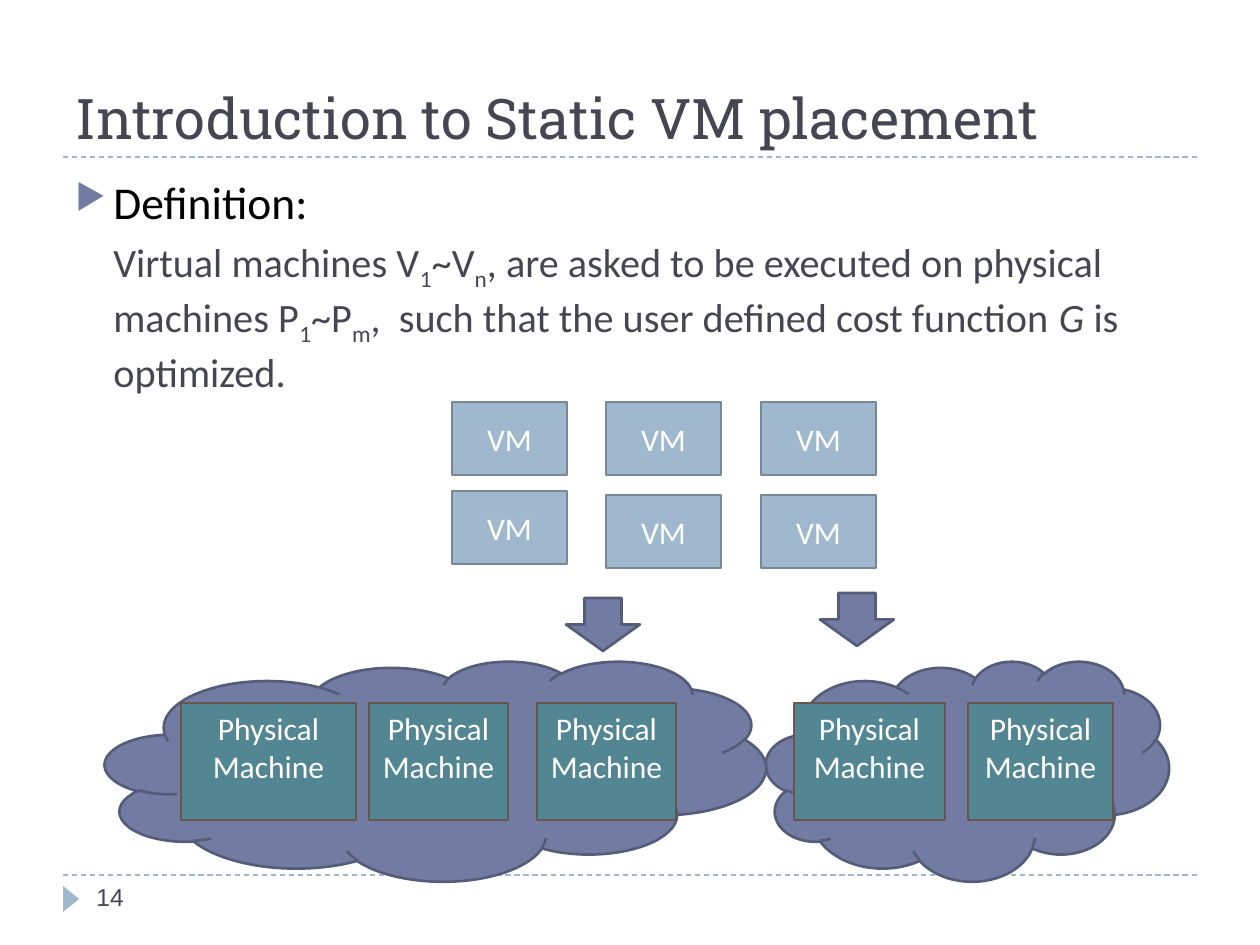
from lxml import etree
from pptx import Presentation
from pptx.dml.color import RGBColor
from pptx.enum.dml import MSO_LINE
from pptx.enum.shapes import MSO_CONNECTOR, MSO_SHAPE
from pptx.enum.text import MSO_ANCHOR, PP_ALIGN
from pptx.oxml.ns import qn
from pptx.util import Emu, Pt

TOP, MIDDLE, BOTTOM = MSO_ANCHOR.TOP, MSO_ANCHOR.MIDDLE, MSO_ANCHOR.BOTTOM
CENTER = PP_ALIGN.CENTER
CLOUD, ARROW, BOX, TRIANGLE = (MSO_SHAPE.CLOUD, MSO_SHAPE.DOWN_ARROW,
                               MSO_SHAPE.RECTANGLE, MSO_SHAPE.ISOSCELES_TRIANGLE)
EMU_PER_PX = 914400 / 126

INK, WHITE, BLACK = "464653", "FFFFFF", "000000"
PALE_BLUE, PURPLE = "9FB8CD", "727CA3"
PURPLE_STYLE = (PURPLE, "545C79")
VM_STYLE = (PALE_BLUE, "768898")
MACHINE_STYLE = ("528693", "69554E")

TITLE = "Introduction to Static VM placement"
HEADING = "Definition:"
# (text, role) where role is "", "sub" or "italic"
DEFINITION = [
    ("Virtual machines V", ""), ("1", "sub"), ("~V", ""), ("n", "sub"),
    (", are asked to be executed on physical machines P", ""),
    ("1", "sub"), ("~P", ""), ("m", "sub"),
    (",  such that the user defined cost function ", ""),
    ("G", "italic"), (" is optimized.", ""),
]
PAGE_NUMBER = "14"

RULE_LEFT, RULE_RIGHT, RULE_TOPS = 63, 1197, (875, 157)
CLOUDS = [(766, 661, 403, 220), (105, 661, 661, 220)]
ARROWS = [(566, 598, 74, 53), (820, 593, 74, 53)]
VM_COLUMNS = [(452, (402, 491)), (606, (402, 495)), (761, (402, 495))]
VM_WIDTH, VM_HEIGHT = 115, 73
MACHINE_COLUMNS = [(181, 175), (369, 139), (537, 139), (794, 151), (968, 145)]
MACHINE_TOP, MACHINE_HEIGHT = 703, 117


def px(value):
    return Emu(round(value * EMU_PER_PX))


def color(hex_text):
    return RGBColor.from_string(hex_text)


def add_run(paragraph, text, size, ink, font="Calibri"):
    run = paragraph.add_run()
    run.text = text
    run.font.size = Pt(size)
    run.font.name = font
    run.font.color.rgb = color(ink)
    return run


def add_text_box(slide, place, anchor=TOP):
    frame = slide.shapes.add_textbox(*map(px, place)).text_frame
    frame.word_wrap = True
    frame.vertical_anchor = anchor
    return frame


def add_preset(slide, kind, place, style, label="", anchor=MIDDLE):
    """Add a shape; style is (fill, line), with None for no line."""
    fill, line = style
    shape = slide.shapes.add_shape(kind, *map(px, place))
    shape.shadow.inherit = False
    shape.fill.solid()
    shape.fill.fore_color.rgb = color(fill)
    if line:
        shape.line.color.rgb = color(line)
        shape.line.width = Pt(1.5)
    else:
        shape.line.fill.background()
    if label:
        shape.text_frame.word_wrap = True
        shape.text_frame.vertical_anchor = anchor
        paragraph = shape.text_frame.paragraphs[0]
        paragraph.alignment = CENTER
        add_run(paragraph, label, 18, WHITE)
    return shape


def add_rule(slide, top):
    rule = slide.shapes.add_connector(
        MSO_CONNECTOR.STRAIGHT, px(RULE_LEFT), px(top), px(RULE_RIGHT), px(top))
    rule.line.color.rgb = color(PALE_BLUE)
    rule.line.width = Pt(0.75)
    rule.line.dash_style = MSO_LINE.DASH
    etree.SubElement(rule._element.spPr, qn("a:effectLst"))


def set_indent(paragraph, left, first):
    properties = paragraph._p.get_or_add_pPr()
    properties.set("marL", str(px(left)))
    properties.set("indent", str(px(first)))
    return properties


def add_bullet(properties):
    bullet_color = etree.SubElement(properties, qn("a:buClr"))
    etree.SubElement(bullet_color, qn("a:srgbClr"), val=PURPLE)
    etree.SubElement(properties, qn("a:buSzPct"), val="76000")
    etree.SubElement(properties, qn("a:buChar"), char="▶")


def add_body(slide):
    frame = add_text_box(slide, (63, 168, 1134, 680))
    heading = frame.paragraphs[0]
    heading.space_before = Pt(6)
    add_bullet(set_indent(heading, 38, -38))
    add_run(heading, HEADING, 26, BLACK)

    definition = frame.add_paragraph()
    definition.space_before = Pt(5)
    set_indent(definition, 38, 0)
    for text, role in DEFINITION:
        run = add_run(definition, text, 23, INK)
        if role == "sub":
            run.font._element.set("baseline", "-25000")
        elif role == "italic":
            run.font.italic = True


def main():
    presentation = Presentation()
    presentation.slide_width, presentation.slide_height = px(1260), px(945)
    slide = presentation.slides.add_slide(presentation.slide_layouts[6])

    for top in RULE_TOPS:
        add_rule(slide, top)
    add_preset(slide, TRIANGLE, (58, 891, 26, 16), (PALE_BLUE, None)).rotation = 90
    for place in CLOUDS:
        add_preset(slide, CLOUD, place, PURPLE_STYLE)

    title = add_text_box(slide, (63, 21, 1134, 136), BOTTOM)
    add_run(title.paragraphs[0], TITLE, 32, INK, "Roboto Slab")
    add_body(slide)
    number = add_text_box(slide, (84, 876, 273, 50))
    add_run(number.paragraphs[0], PAGE_NUMBER, 14, INK, "Arial")

    for left, width in MACHINE_COLUMNS:
        add_preset(slide, BOX, (left, MACHINE_TOP, width, MACHINE_HEIGHT),
                   MACHINE_STYLE, "Physical Machine", TOP)
    for left, tops in VM_COLUMNS:
        for top in tops:
            add_preset(slide, BOX, (left, top, VM_WIDTH, VM_HEIGHT), VM_STYLE, "VM")
    for place in ARROWS:
        add_preset(slide, ARROW, place, PURPLE_STYLE)

    presentation.save("out.pptx")


if __name__ == "__main__":
    main()
